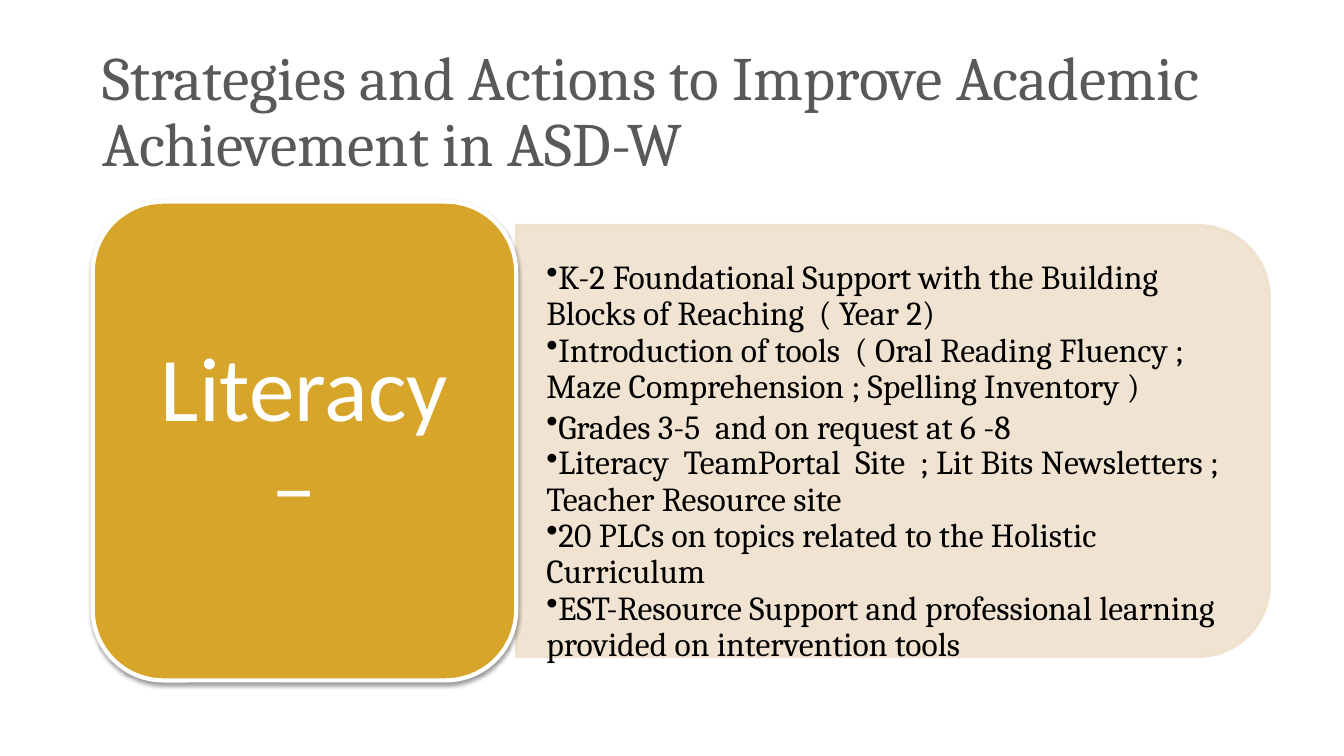
import pptx
import pptx.dml.color
import pptx.enum.shapes
import pptx.enum.text
import pptx.oxml
import pptx.oxml.ns
import pptx.util

Inches = pptx.util.Inches
SHAPES = pptx.enum.shapes.MSO_SHAPE
ANCHORS = pptx.enum.text.MSO_ANCHOR
ALIGNMENTS = pptx.enum.text.PP_ALIGN

COLORS = {
    "title": "595959",
    "gold": "D7A52A",
    "sand": "F0E1CD",
    "black": "000000",
    "white": "FFFFFF",
}
TITLE = "Strategies and Actions to Improve Academic Achievement in ASD-W"
TOPIC = "Literacy – "
# Each action with its outline level and line spacing
ACTIONS = [
    ("K-2 Foundational Support with the Building Blocks of Reaching  ( Year 2)", 1, 0.9),
    ("Introduction of tools  ( Oral Reading Fluency ; Maze Comprehension ; Spelling Inventory )", 1, 0.9),
    ("Grades 3-5  and on request at 6 -8", 0, 1.0),
    ("Literacy  TeamPortal  Site  ; Lit Bits Newsletters ; Teacher Resource site", 1, 0.9),
    ("20 PLCs on topics related to the Holistic Curriculum", 1, 0.9),
    ("EST-Resource Support and professional learning provided on intervention tools", 1, 0.9),
]


def color(name):
    return pptx.dml.color.RGBColor.from_string(COLORS[name])


def set_values(target, values):
    for name, value in values.items():
        setattr(target, name, value)


def drawing_element(tag, content="", **attributes):
    listed = " ".join(f'{name}="{value}"' for name, value in attributes.items())
    namespace = pptx.oxml.ns.nsdecls("a")
    return pptx.oxml.parse_xml(f"<a:{tag} {namespace} {listed}>{content}</a:{tag}>")


def add_text_frame(slide, box, margins=(0.1, 0.05), anchor=ANCHORS.TOP):
    """Margins are given as (side, top and bottom) in inches."""
    frame = slide.shapes.add_textbox(*map(Inches, box)).text_frame
    side, edge = map(Inches, margins)
    set_values(frame, {
        "word_wrap": True, "vertical_anchor": anchor,
        "margin_left": side, "margin_right": side,
        "margin_top": edge, "margin_bottom": edge,
    })
    return frame


def write(para, text, size, font, tint, **layout):
    set_values(para, {"line_spacing": 0.9, "space_before": pptx.util.Pt(0), **layout})
    span = para.add_run()
    span.text = text
    set_values(span.font, {"name": font, "size": pptx.util.Pt(size)})
    span.font.color.rgb = color(tint)


def add_filled_shape(slide, kind, box, fill, line, weight):
    shape = slide.shapes.add_shape(kind, *map(Inches, box))
    shape.shadow.inherit = False
    shape.fill.solid()
    shape.fill.fore_color.rgb = color(fill)
    shape.line.color.rgb = color(line)
    shape.line.width = pptx.util.Pt(weight)
    return shape


def add_title(slide, box):
    frame = add_text_frame(slide, box, anchor=ANCHORS.MIDDLE)
    write(frame.paragraphs[0], TITLE, 44, "Cambria", "title", space_after=pptx.util.Pt(6))


def add_actions_panel(slide, box):
    """Panel rounded on its right side: a shape with a round top, turned by 90 degrees."""
    left, top, width, height = box
    upright = (left + (width - height) / 2, top + (height - width) / 2, height, width)
    panel = add_filled_shape(slide, SHAPES.ROUND_2_SAME_RECTANGLE, upright, "sand", "sand", 2)
    panel.rotation = 90
    for tint in panel._element.spPr.iter(pptx.oxml.ns.qn("a:srgbClr")):
        tint.append(drawing_element("alpha", val=90000))

    inset = 0.21
    text_box = (left, top + inset, width - inset, height - 2 * inset)
    frame = add_text_frame(slide, text_box, margins=(0.3, 0.14))
    frame.margin_right = Inches(0.27)
    for index, (action, level, spacing) in enumerate(ACTIONS):
        para = frame.add_paragraph() if index else frame.paragraphs[0]
        properties = para._p.get_or_add_pPr()
        set_values(para, {"level": level})
        properties.set("marL", "0")
        properties.set("indent", "0")
        properties.append(drawing_element("buChar", char="•"))
        write(para, action, 24, "Cambria", "black", line_spacing=spacing)


def add_topic_badge(slide, box):
    badge = add_filled_shape(slide, SHAPES.ROUNDED_RECTANGLE, box, "gold", "white", 3)
    tint = f'<a:srgbClr val="{COLORS["black"]}"><a:alpha val="38000"/></a:srgbClr>'
    shadow = drawing_element(
        "outerShdw", tint, blurRad=pptx.util.Pt(3.1), dist=pptx.util.Pt(1.6),
        dir=90 * 60000, rotWithShape=0)
    badge._element.spPr.find(pptx.oxml.ns.qn("a:effectLst")).append(shadow)

    left, top, width, height = box
    inset = 0.2
    text_box = (left + inset, top + inset, width - 2 * inset, height - 2 * inset)
    frame = add_text_frame(slide, text_box, (0.27, 0.14), ANCHORS.MIDDLE)
    write(frame.paragraphs[0], TOPIC, 65, "Calibri", "white",
          alignment=ALIGNMENTS.CENTER, space_after=pptx.util.Pt(23))


def main():
    deck = pptx.Presentation()
    set_values(deck, {"slide_width": Inches(13.33), "slide_height": Inches(7.5)})
    slide = deck.slides.add_slide(deck.slide_layouts[6])

    margin, content_top = 0.92, 2
    badge_width, badge_height = 4.2, 4.75
    panel_width, panel_height = 7.47, 4.28
    panel_top = content_top + (badge_height - panel_height) / 2

    add_title(slide, (margin, 0.4, 11.5, 1.45))
    add_actions_panel(slide, (margin + badge_width, panel_top, panel_width, panel_height))
    add_topic_badge(slide, (margin, content_top, badge_width, badge_height))
    deck.save("out.pptx")


if __name__ == "__main__":
    main()
